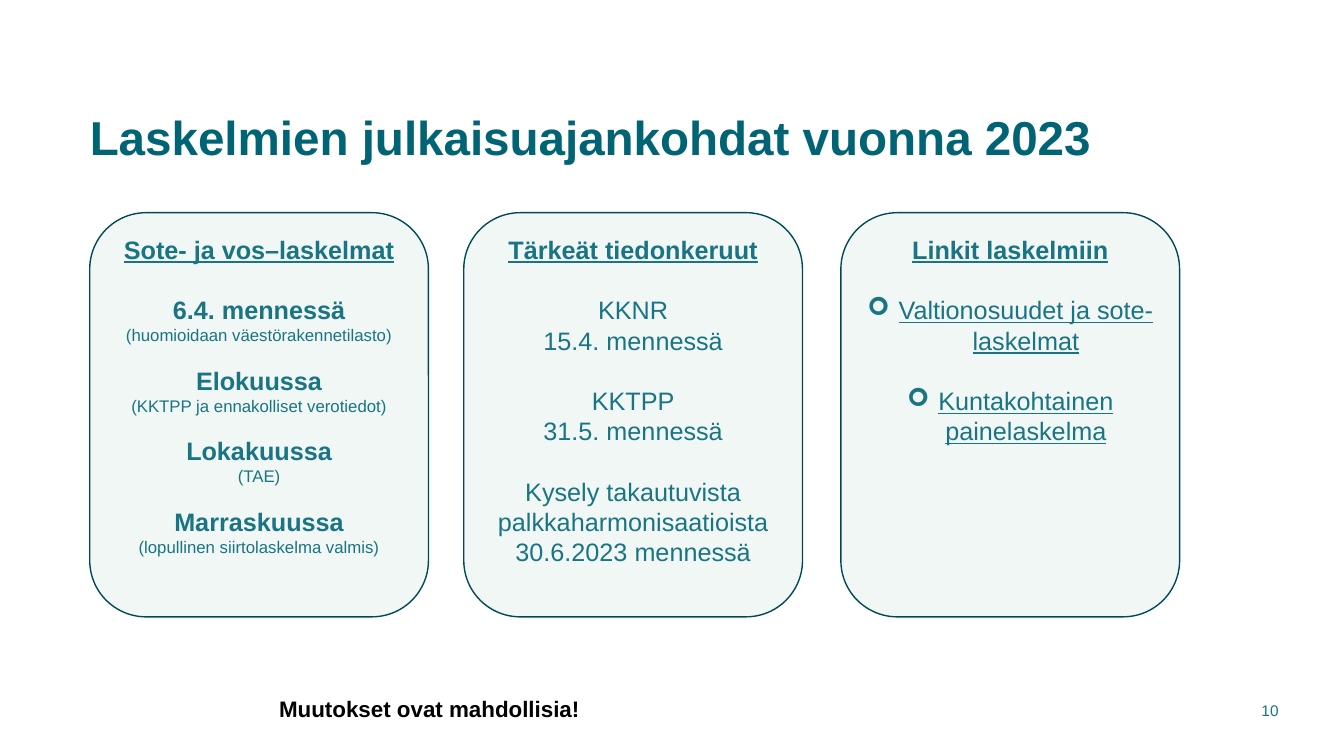
from lxml import etree
from pptx import Presentation
from pptx.dml.color import RGBColor
from pptx.enum.shapes import MSO_SHAPE as Shape
from pptx.enum.text import MSO_ANCHOR as Anchor, PP_ALIGN as Align
from pptx.oxml.ns import qn
from pptx.util import Inches, Pt

TEAL, PALE, EDGE = "1A7483", "F0F7F5", "004A57"
BIG, SMALL = 18, 12


def rgb(code):
    return RGBColor.from_string(code)


def bullet(para, mark, indent):
    """Give the paragraph a bullet with a hanging indent."""
    props = para._p.get_or_add_pPr()
    props.set("marL", str(indent))
    props.set("indent", str(-indent))
    etree.SubElement(props, qn("a:buFont")).set("typeface", "Wingdings")
    etree.SubElement(props, qn("a:buChar")).set("char", mark)


def write(frame, text, size=BIG, color=TEAL, bold=False, under=False,
          align=Align.LEFT, before=0, spacing=None, mark=None):
    """Fill the first paragraph if it is free, else add one."""
    para = frame.paragraphs[0]
    if para.runs:
        para = frame.add_paragraph()
    para.alignment = align
    if before:
        para.space_before = Pt(before)
    if spacing:
        para.line_spacing = spacing
    if mark:
        bullet(para, mark, Inches(0.31))
    run = para.add_run()
    run.text = text
    font = run.font
    font.name, font.size, font.bold, font.underline = "Arial", Pt(size), bold, under
    font.color.rgb = rgb(color)


def label(slide, box, text, anchor=Anchor.TOP, side=0.1, **style):
    frame = slide.shapes.add_textbox(*map(Inches, box)).text_frame
    frame.word_wrap = True
    frame.vertical_anchor = anchor
    frame.margin_left = frame.margin_right = Inches(side)
    write(frame, text, **style)


def card(slide, box, head, lines):
    """Draw a rounded card with a heading and (text, style) lines."""
    shape = slide.shapes.add_shape(Shape.ROUNDED_RECTANGLE, *map(Inches, box))
    shape.shadow.inherit = False
    shape.fill.solid()
    shape.fill.fore_color.rgb = rgb(PALE)
    shape.line.color.rgb = rgb(EDGE)
    shape.line.width = Pt(1)
    frame = shape.text_frame
    frame.word_wrap = True
    frame.vertical_anchor = Anchor.TOP
    write(frame, head, bold=True, under=True, align=Align.CENTER)
    for text, style in lines:
        write(frame, text, align=Align.CENTER, **style)


def dates(pairs):
    """Bold date with a small note below it, for each pair."""
    lines = []
    for date, note in pairs:
        gap = 1.2 * (SMALL if lines else BIG)
        lines += [(date, dict(bold=True, before=gap)), (note, dict(size=SMALL))]
    return lines


def surveys(pairs):
    lines = []
    for name, due in pairs:
        lines += [(name, dict(before=1.2 * BIG)), (due, {})]
    return lines


def links(names):
    style = dict(under=True, bold=False, before=1.2 * BIG, mark="➢")
    return [(name, style) for name in names]


def main():
    deck = Presentation()
    deck.slide_width, deck.slide_height = Inches(13.33), Inches(7.5)
    slide = deck.slides.add_slide(deck.slide_layouts[6])

    label(slide, (0.89, 0.79, 11.91, 1.18), "Laskelmien julkaisuajankohdat vuonna 2023",
          anchor=Anchor.MIDDLE, side=0, size=34, color="006475", bold=True, spacing=0.95)

    cards = [
        (0.89, "Sote- ja vos–laskelmat", dates([
            ("6.4. mennessä", "(huomioidaan väestörakennetilasto)"),
            ("Elokuussa", "(KKTPP ja ennakolliset verotiedot)"),
            ("Lokakuussa", "(TAE)"),
            ("Marraskuussa", "(lopullinen siirtolaskelma valmis)")])),
        (4.6, "Tärkeät tiedonkeruut", surveys([
            ("KKNR", "15.4. mennessä"),
            ("KKTPP", "31.5. mennessä"),
            ("Kysely takautuvista palkkaharmonisaatioista", "30.6.2023 mennessä")])),
        (8.34, "Linkit laskelmiin", links([
            "Valtionosuudet ja sote-laskelmat", "Kuntakohtainen painelaskelma"])),
    ]
    for left, head, lines in cards:
        card(slide, (left, 2.11, 3.36, 4.01), head, lines)

    label(slide, (2.67, 6.85, 3.34, 0.37), "Muutokset ovat mahdollisia!",
          size=16, color="000000", bold=True)
    label(slide, (11.57, 6.85, 1.21, 0.4), "10", anchor=Anchor.MIDDLE,
          size=11, align=Align.RIGHT)
    deck.save("out.pptx")


if __name__ == "__main__":
    main()
